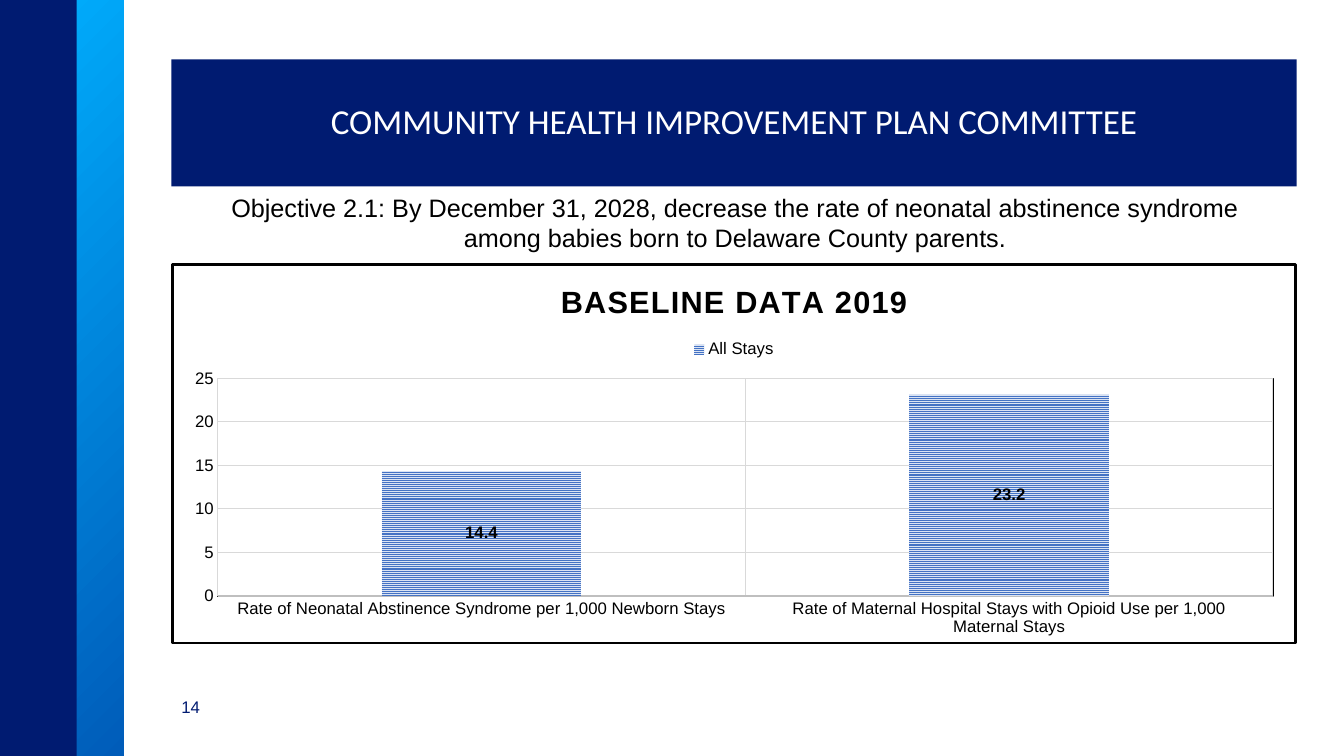
"""Build the community health improvement plan slide with its baseline chart."""
import pptx
import pptx.chart.data
import pptx.dml.color
import pptx.enum.chart
import pptx.enum.dml
import pptx.enum.shapes
import pptx.enum.text
import pptx.oxml
import pptx.oxml.ns
import pptx.util
from pptx.util import Inches

TITLE = "COMMUNITY HEALTH IMPROVEMENT PLAN COMMITTEE"
OBJECTIVE = ("Objective 2.1: By December 31, 2028, decrease the rate of neonatal abstinence "
             "syndrome among babies born to Delaware County parents.")
PAGE_NUMBER = "14"
CHART_TITLE = "BASELINE DATA 2019"
SERIES_NAME = "All Stays"
RATES = {
    "Rate of Neonatal Abstinence Syndrome per 1,000 Newborn Stays": 14.4,
    "Rate of Maternal Hospital Stays with Opioid Use per 1,000 Maternal Stays": 23.2,
}
THEME = {
    "navy": "001B71", "blue": "005CB9", "sky": "00ACFC", "white": "FFFFFF", "black": "000000",
    "bar": "4472C4", "bar_back": "DAE3F3", "grid": "D9D9D9", "axis": "BFBFBF",
    "heading_font": "Calibri", "body_font": "Arial",
    "title": 25, "chart_title": 22, "objective": 18, "small": 12,
}
CONTENT_LEFT, CONTENT_WIDTH = 1.7, 11.16
BAND_WIDTH, SLIDE_HEIGHT = 0.76, 7.5


def color(name):
    return pptx.dml.color.RGBColor.from_string(THEME[name])


def style_font(font, size, tone="black", face="body_font", bold=False):
    font.size = pptx.util.Pt(THEME[size])
    font.name = THEME[face]
    font.bold = bold
    font.color.rgb = color(tone)


def style_line(line, tone, width):
    line.color.rgb = color(tone)
    line.width = pptx.util.Pt(width)


def outlined_properties(width):
    return pptx.oxml.parse_xml(
        f'<c:spPr {pptx.oxml.ns.nsdecls("c", "a")}>'
        f'<a:solidFill><a:srgbClr val="{THEME["white"]}"/></a:solidFill>'
        f'<a:ln w="{int(pptx.util.Pt(width))}"><a:solidFill><a:srgbClr val="{THEME["black"]}"/>'
        '</a:solidFill></a:ln></c:spPr>')


def add_band(slide, left):
    band = slide.shapes.add_shape(pptx.enum.shapes.MSO_SHAPE.RECTANGLE, Inches(left), 0,
                                  Inches(BAND_WIDTH), Inches(SLIDE_HEIGHT))
    band.shadow.inherit = False
    band.line.fill.background()
    return band


def add_bands(slide):
    gradient_band = add_band(slide, 0.47)
    gradient_band.fill.gradient()
    gradient_band.fill.gradient_angle = 135
    for stop, tone in zip(gradient_band.fill.gradient_stops, ("blue", "sky")):
        stop.color.rgb = color(tone)
    navy_band = add_band(slide, 0)
    navy_band.fill.solid()
    navy_band.fill.fore_color.rgb = color("navy")


def add_title(slide):
    title = slide.shapes.title
    title.left, title.top = Inches(CONTENT_LEFT), Inches(0.59)
    title.width, title.height = Inches(CONTENT_WIDTH), Inches(1.26)
    title.fill.solid()
    title.fill.fore_color.rgb = color("navy")
    title.text_frame.text = TITLE
    title.text_frame.vertical_anchor = pptx.enum.text.MSO_ANCHOR.MIDDLE
    paragraph = title.text_frame.paragraphs[0]
    paragraph.alignment = pptx.enum.text.PP_ALIGN.CENTER
    paragraph.line_spacing = 0.9
    style_font(paragraph.runs[0].font, "title", "white", "heading_font")


def add_text(slide, text, box, size, tone, alignment):
    shape = slide.shapes.add_textbox(*map(Inches, box))
    shape.text_frame.word_wrap = True
    shape.text_frame.text = text
    paragraph = shape.text_frame.paragraphs[0]
    paragraph.alignment = alignment
    style_font(paragraph.runs[0].font, size, tone)


def add_rate_chart(slide):
    data = pptx.chart.data.CategoryChartData()
    data.categories = list(RATES)
    data.add_series(SERIES_NAME, list(RATES.values()))
    chart = slide.shapes.add_chart(
        pptx.enum.chart.XL_CHART_TYPE.COLUMN_CLUSTERED, Inches(CONTENT_LEFT), Inches(2.61),
        Inches(CONTENT_WIDTH), Inches(3.78), data).chart
    style_font(chart.font, "small")

    chart.has_title = True
    chart.chart_title.include_in_layout = False
    chart.chart_title.text_frame.text = CHART_TITLE
    title_font = chart.chart_title.text_frame.paragraphs[0].runs[0].font
    style_font(title_font, "chart_title", bold=True)
    title_run = chart.element.find(".//" + pptx.oxml.ns.qn("a:r"))
    title_run.find(pptx.oxml.ns.qn("a:rPr")).set("spc", "100")

    chart.has_legend = True
    chart.legend.position = pptx.enum.chart.XL_LEGEND_POSITION.TOP
    chart.legend.include_in_layout = False
    style_font(chart.legend.font, "small")

    for axis in (chart.category_axis, chart.value_axis):
        axis.major_tick_mark = pptx.enum.chart.XL_TICK_MARK.NONE
        axis.has_major_gridlines = True
        style_line(axis.major_gridlines.format.line, "grid", 0.75)
        style_font(axis.tick_labels.font, "small")
    style_line(chart.category_axis.format.line, "axis", 1.5)
    chart.value_axis.format.line.fill.background()

    plot = chart.plots[0]
    plot.vary_by_categories = False
    plot.gap_width, plot.overlap = 164, -22
    fill = plot.series[0].format.fill
    fill.patterned()
    fill.pattern = pptx.enum.dml.MSO_PATTERN.NARROW_HORIZONTAL
    fill.fore_color.rgb = color("bar")
    fill.back_color.rgb = color("bar_back")
    labels = plot.series[0].data_labels
    labels.show_value = True
    labels.position = pptx.enum.chart.XL_LABEL_POSITION.CENTER
    style_font(labels.font, "small", bold=True)

    chart.element.find(".//" + pptx.oxml.ns.qn("c:plotArea")).append(outlined_properties(1))
    chart.element.find(pptx.oxml.ns.qn("c:chart")).addnext(outlined_properties(1.75))


def main():
    presentation = pptx.Presentation()
    presentation.slide_width, presentation.slide_height = Inches(13.33), Inches(SLIDE_HEIGHT)
    slide = presentation.slides.add_slide(presentation.slide_layouts[5])
    add_bands(slide)
    add_title(slide)
    add_text(slide, PAGE_NUMBER, (CONTENT_LEFT, 6.86, 0.55, 0.4), "small", "navy",
             pptx.enum.text.PP_ALIGN.LEFT)
    add_text(slide, OBJECTIVE, (1.96, 1.86, 10.66, 0.71), "objective", "black",
             pptx.enum.text.PP_ALIGN.CENTER)
    add_rate_chart(slide)
    presentation.save("out.pptx")


if __name__ == "__main__":
    main()
